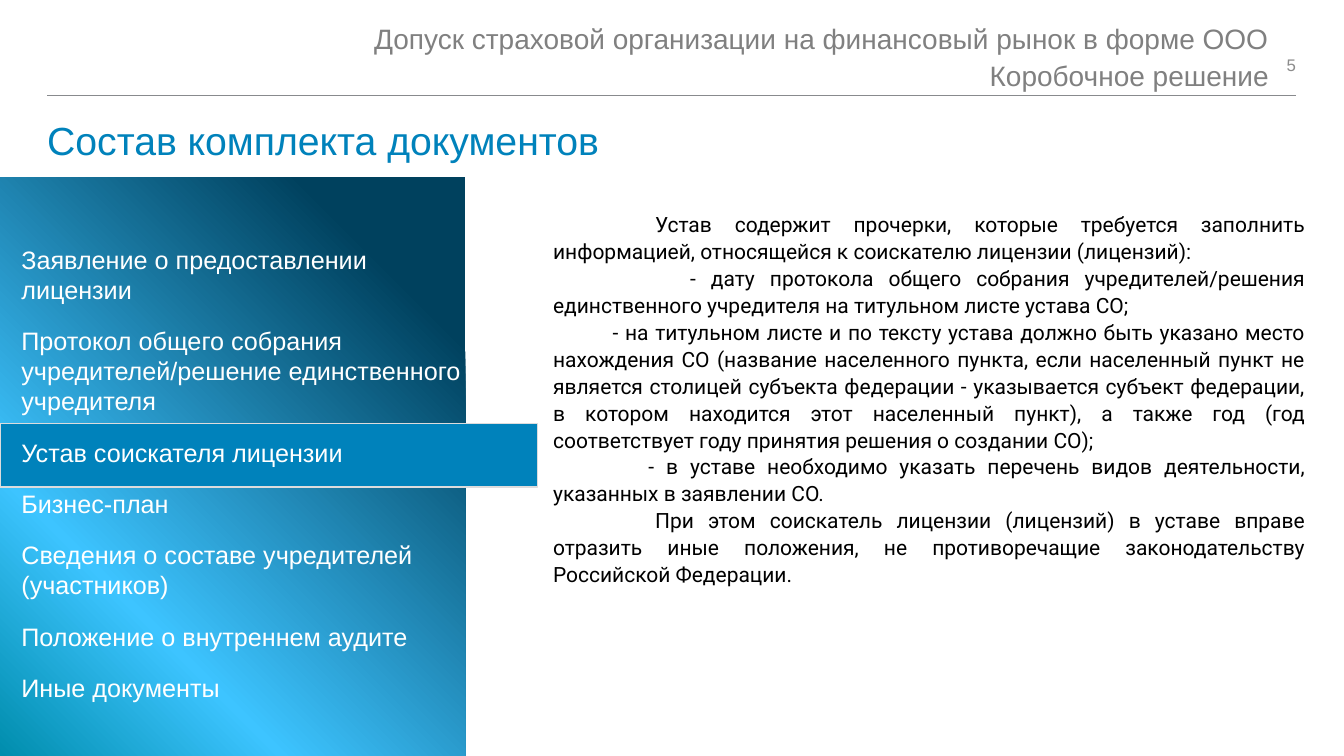
from lxml import etree
from pptx import Presentation
from pptx.dml.color import RGBColor
from pptx.enum.shapes import MSO_CONNECTOR, MSO_SHAPE
from pptx.enum.text import MSO_ANCHOR, PP_ALIGN
from pptx.oxml.ns import qn
from pptx.util import Cm, Pt

RECTANGLE, STRAIGHT = MSO_SHAPE.RECTANGLE, MSO_CONNECTOR.STRAIGHT
TOP, MIDDLE = MSO_ANCHOR.TOP, MSO_ANCHOR.MIDDLE
LEFT, RIGHT, JUSTIFY = PP_ALIGN.LEFT, PP_ALIGN.RIGHT, PP_ALIGN.JUSTIFY

# Content
HEADER = ["Допуск страховой организации на финансовый рынок в форме ООО", "Коробочное решение"]
TITLE = "Состав комплекта документов"
PAGE_NUMBER = "5"
MENU = [
    "Заявление о предоставлении лицензии",
    "Протокол общего собрания учредителей/решение единственного учредителя",
    "Устав соискателя лицензии",
    "Бизнес-план",
    "Сведения о составе учредителей (участников)",
    "Положение о внутреннем аудите",
    "Иные документы",
]
# First-line indent in cm, text
BODY = [
    (2.57, "Устав содержит прочерки, которые требуется заполнить информацией, "
           "относящейся к соискателю лицензии (лицензий):"),
    (3.45, "- дату протокола общего собрания учредителей/решения единственного "
           "учредителя на титульном листе устава СО;"),
    (1.5, "- на титульном листе и по тексту устава должно быть указано место "
          "нахождения СО (название населенного пункта, если населенный пункт не "
          "является столицей субъекта федерации - указывается субъект федерации, "
          "в котором находится этот населенный пункт), а также год (год "
          "соответствует году принятия решения о создании СО);"),
    (2.4, "- в уставе необходимо указать перечень видов деятельности, "
          "указанных в заявлении СО."),
    (2.57, "При этом соискатель лицензии (лицензий) в уставе вправе отразить иные "
           "положения, не противоречащие законодательству Российской Федерации."),
]
COLORS = {"blue": "0082BB", "header": "808080", "number": "8C8C8C", "rule": "888A8D",
          "border": "DCDCDD", "white": "FFFFFF", "black": "000000"}
GRADIENT = [(16, "00415E"), (73, "3DC4FF"), (100, "008DAD")]

# Layout in cm
SLIDE_WIDTH, SLIDE_HEIGHT = 33.87, 19.05
MARGIN_LEFT, MARGIN_RIGHT = 1.19, 32.66
RULE_TOP = 2.41
PANEL_WIDTH, PANEL_HEIGHT = 11.73, 14.58


def color(name):
    return RGBColor.from_string(COLORS[name])


def add_text(slide, box, lines, size, color_name, font="Arial", align=LEFT, anchor=TOP,
             spacing=1.0, after=0, padded=False):
    text_frame = slide.shapes.add_textbox(*map(Cm, box)).text_frame
    text_frame.word_wrap = True
    text_frame.vertical_anchor = anchor
    if not padded:
        text_frame.margin_left = text_frame.margin_right = 0
        text_frame.margin_top = text_frame.margin_bottom = 0
    text_frame.text = "\n".join(lines)
    for paragraph in text_frame.paragraphs:
        paragraph.alignment = align
        paragraph.line_spacing = spacing
        paragraph.space_after = Pt(after)
        for run in paragraph.runs:
            run.font.name = font
            run.font.size = Pt(size)
            run.font.color.rgb = color(color_name)
    return text_frame


def add_rectangle(slide, left, top, width, height):
    shape = slide.shapes.add_shape(RECTANGLE, Cm(left), Cm(top), Cm(width), Cm(height))
    shape.shadow.inherit = False
    return shape


def fill_gradient(shape, stops, angle):
    shape.fill.gradient()
    shape.fill.gradient_angle = angle
    stop_list = shape.element.spPr.find(".//" + qn("a:gsLst"))
    for old_stop in list(stop_list):
        stop_list.remove(old_stop)
    for percent, value in stops:
        stop = etree.SubElement(stop_list, qn("a:gs"), pos=str(percent * 1000))
        etree.SubElement(stop, qn("a:srgbClr"), val=value)


def main():
    presentation = Presentation()
    presentation.slide_width, presentation.slide_height = Cm(SLIDE_WIDTH), Cm(SLIDE_HEIGHT)
    slide = presentation.slides.add_slide(presentation.slide_layouts[6])

    # Header rule, title and page number
    rule = slide.shapes.add_connector(STRAIGHT, Cm(MARGIN_LEFT), Cm(RULE_TOP),
                                      Cm(MARGIN_RIGHT), Cm(RULE_TOP))
    rule.line.color.rgb = color("rule")
    rule.line.width = Pt(0.5)
    etree.SubElement(rule.element.spPr, qn("a:effectLst"))
    add_text(slide, (MARGIN_LEFT, 3.07, MARGIN_RIGHT - MARGIN_LEFT, 1.68), [TITLE],
             28, "blue", spacing=0.9)
    add_text(slide, (MARGIN_RIGHT - 2.06, 1.19, 2.06, 0.89), [PAGE_NUMBER],
             12, "number", align=RIGHT, anchor=MIDDLE)

    # Side panel: turned a quarter about its centre, flush with the bottom left corner
    panel = add_rectangle(slide, (PANEL_WIDTH - PANEL_HEIGHT) / 2,
                          SLIDE_HEIGHT - (PANEL_HEIGHT + PANEL_WIDTH) / 2,
                          PANEL_HEIGHT, PANEL_WIDTH)
    panel.rotation = 90
    fill_gradient(panel, GRADIENT, 315)
    panel.line.fill.background()

    # Current menu item and menu
    highlight = add_rectangle(slide, 0, 10.67, 13.54, 1.6)
    highlight.fill.solid()
    highlight.fill.fore_color.rgb = color("blue")
    highlight.line.color.rgb = color("border")
    highlight.line.width = Pt(1)
    add_text(slide, (0.29, 6.02, 11.71, 11.94), MENU, 18, "white", after=15, padded=True)

    # Header and body
    add_text(slide, (MARGIN_LEFT, 0.46, 30.79, 1.68), HEADER, 20, "header",
             align=RIGHT, spacing=1.1)
    body = add_text(slide, (12.42, 5.16, 20.73, 9.86), [text for _, text in BODY], 15, "black",
                    font="Roboto", align=JUSTIFY, spacing=1.07, padded=True)
    for paragraph, (indent, _) in zip(body.paragraphs, BODY):
        properties = paragraph._p.get_or_add_pPr()
        properties.set("marL", str(Cm(1.27)))
        properties.set("indent", str(Cm(indent)))

    presentation.save("out.pptx")


if __name__ == "__main__":
    main()
